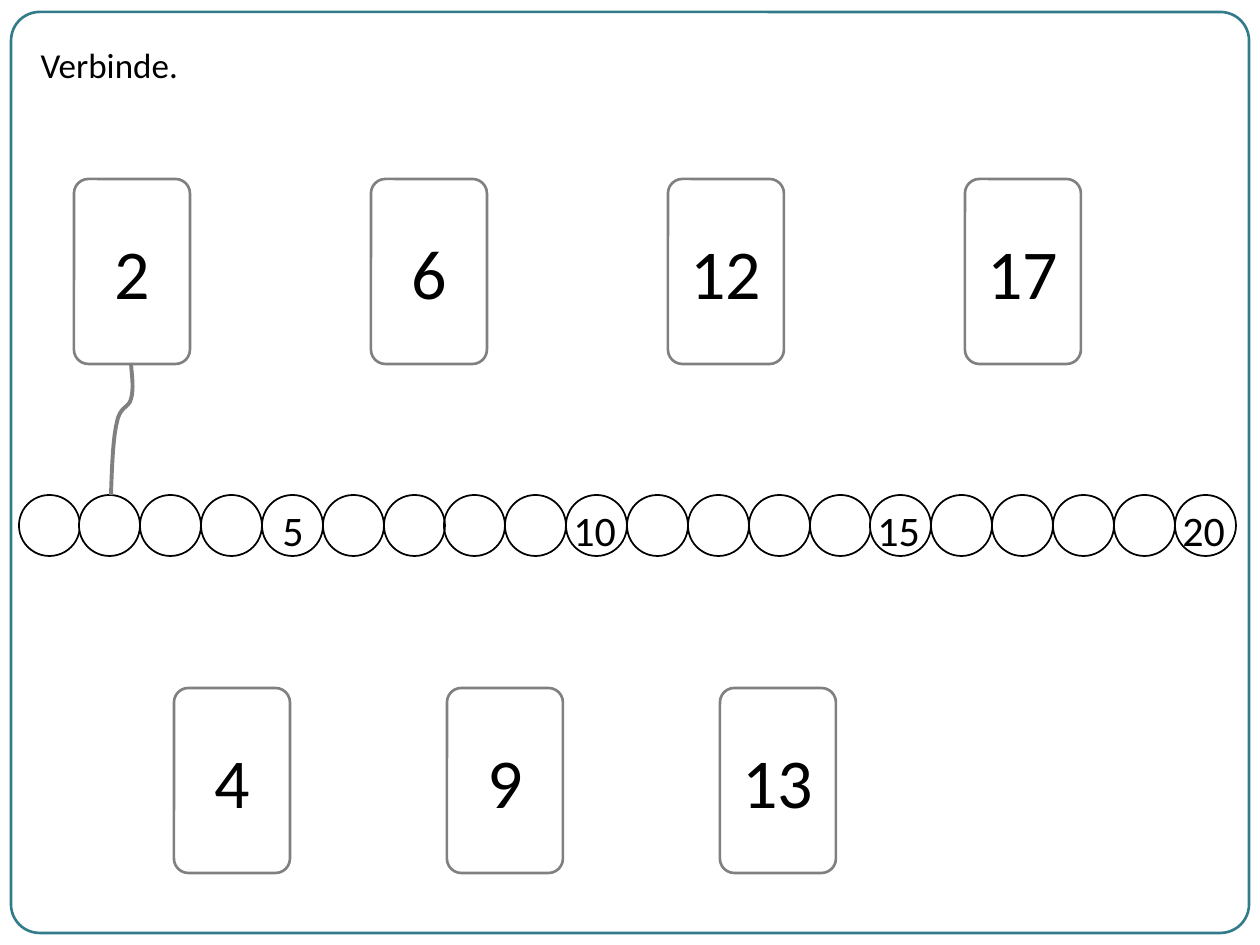
from dataclasses import dataclass

from lxml.etree import SubElement
from pptx import Presentation
from pptx.dml.color import RGBColor
from pptx.enum.shapes import MSO_SHAPE
from pptx.enum.text import MSO_ANCHOR, MSO_AUTO_SIZE, PP_ALIGN
from pptx.oxml.ns import qn
from pptx.util import Emu, Pt

SCALE = 914400 / 126


def px(n):
    return Emu(round(n * SCALE))


@dataclass(frozen=True)
class Theme:
    font: str = "Calibri"
    ink: str = "000000"
    gray: str = "808080"
    teal: str = "327B8A"
    white: str = "FFFFFF"
    task: int = 20
    label: int = 24
    digit: int = 40


class Sheet:
    def __init__(self, slide, theme):
        self.slide = slide
        self.theme = theme

    def letter(self, frame, text, size, align=PP_ALIGN.LEFT, anchor=MSO_ANCHOR.TOP):
        frame.text = text
        frame.word_wrap = True
        frame.auto_size = MSO_AUTO_SIZE.NONE
        frame.vertical_anchor = anchor
        line = frame.paragraphs[0]
        line.alignment = align
        font = line.runs[0].font
        font.name = self.theme.font
        font.size = Pt(size)
        font.color.rgb = RGBColor.from_string(self.theme.ink)

    def paint(self, shape, color, width, fill=None):
        shape.shadow.inherit = False
        shape.line.color.rgb = RGBColor.from_string(color)
        shape.line.width = Pt(width)
        if fill:
            shape.fill.solid()
            shape.fill.fore_color.rgb = RGBColor.from_string(fill)
        else:
            shape.fill.background()

    def title(self, text, x, y, w, h):
        box = self.slide.shapes.title
        box.left, box.top, box.width, box.height = map(px, (x, y, w, h))
        self.letter(box.text_frame, text, self.theme.task)

    def panel(self, x, y, w, h, bend, color):
        shape = self.slide.shapes.add_shape(
            MSO_SHAPE.ROUNDED_RECTANGLE, px(x), px(y), px(w), px(h))
        shape.adjustments[0] = bend
        self.paint(shape, color, 1.5)
        return shape

    def card(self, text, x, y):
        frame = self.panel(x, y, 116, 185, 0.124, self.theme.gray).text_frame
        frame.margin_left = frame.margin_right = 0
        self.letter(frame, text, self.theme.digit, PP_ALIGN.CENTER, MSO_ANCHOR.MIDDLE)

    def bead(self, x, y, size, fill):
        shape = self.slide.shapes.add_shape(
            MSO_SHAPE.OVAL, px(x), px(y), px(size), px(size))
        self.paint(shape, self.theme.ink, 1, fill)

    def label(self, text, x, y, w, h):
        box = self.slide.shapes.add_textbox(px(x), px(y), px(w), px(h))
        self.letter(box.text_frame, text, self.theme.label)

    def curve(self, start, points):
        """Draw Bezier curves; each three points are two handles and an end."""
        pen = self.slide.shapes.build_freeform(*start, scale=SCALE)
        pen.add_line_segments(points, close=False)
        shape = pen.convert_to_shape()
        track = shape._element.find(".//" + qn("a:path"))
        steps = track.findall(qn("a:lnTo"))
        for k in range(0, len(steps), 3):
            bend = SubElement(track, qn("a:cubicBezTo"))
            for step in steps[k:k + 3]:
                bend.append(step[0])
                track.remove(step)
        self.paint(shape, self.theme.gray, 2.25)


def main():
    deck = Presentation()
    deck.slide_width, deck.slide_height = px(1260), px(945)
    theme = Theme()
    sheet = Sheet(deck.slides.add_slide(deck.slide_layouts[5]), theme)

    sheet.panel(11, 12, 1238, 921, 0.031, theme.teal)
    sheet.title("Verbinde.", 28, 37, 1075, 93)

    # Twenty beads in groups of five, every fifth one numbered
    left, top, span, count = 19, 495, 1217, 20
    for i in range(count):
        x = left + span * i // count
        sheet.bead(x, top, 61, theme.white if i // 5 % 2 == 0 else None)
        n = i + 1
        if n % 5 == 0:
            shift, wide = (8, 60) if n < 10 else (-5, 89)
            sheet.label(str(n), x + shift, 498, wide, 63)

    rows = (((2, 6, 12, 17), 74, 179, 297), ((4, 9, 13), 174, 688, 273))
    for digits, x, y, gap in rows:
        for i, digit in enumerate(digits):
            sheet.card(str(digit), x + i * gap, y)

    sheet.curve((131, 363), [
        (132, 377), (134, 389), (131, 399),
        (129, 408), (120, 406), (117, 422),
        (113, 438), (112, 466), (111, 495)])
    deck.save("out.pptx")


if __name__ == "__main__":
    main()
